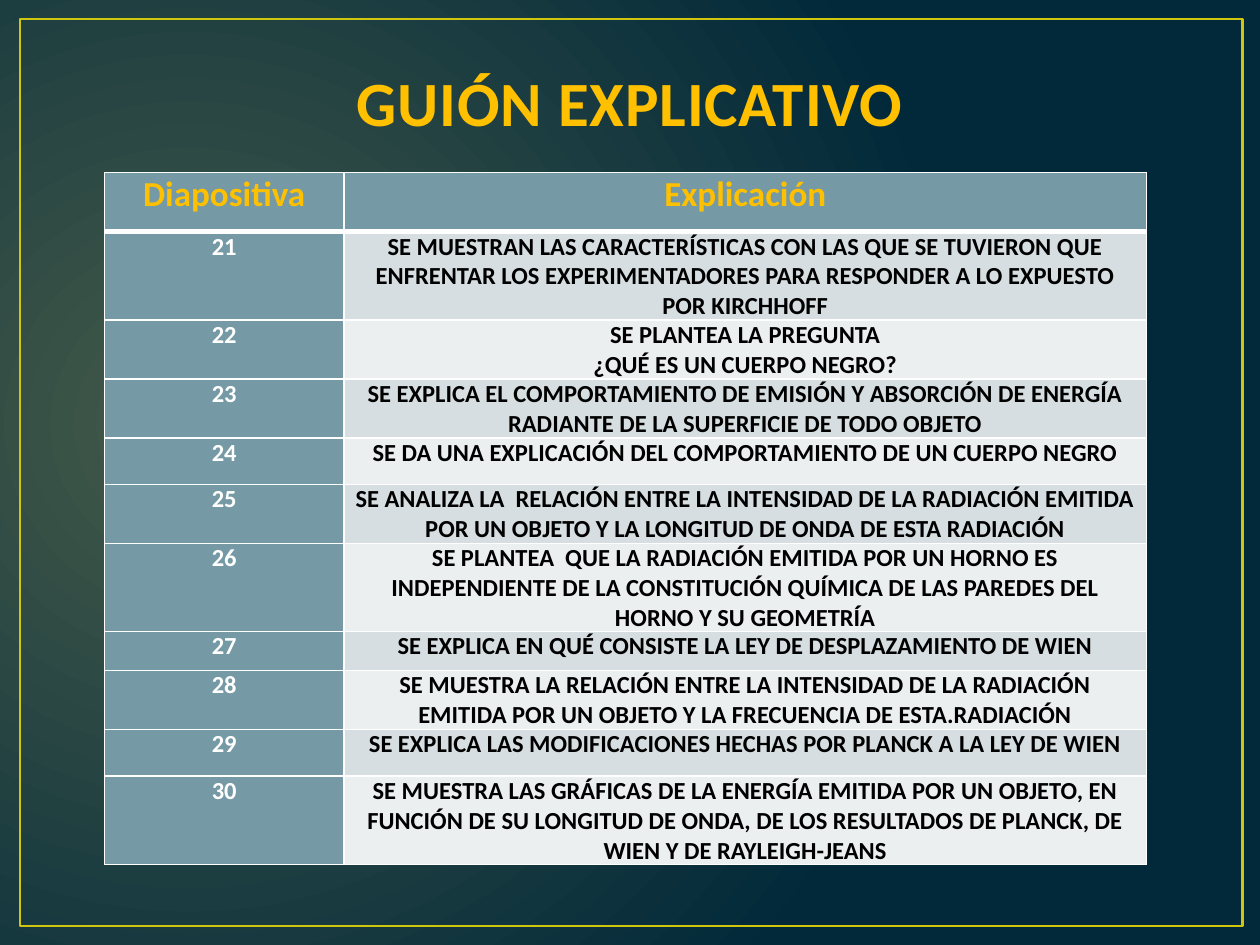
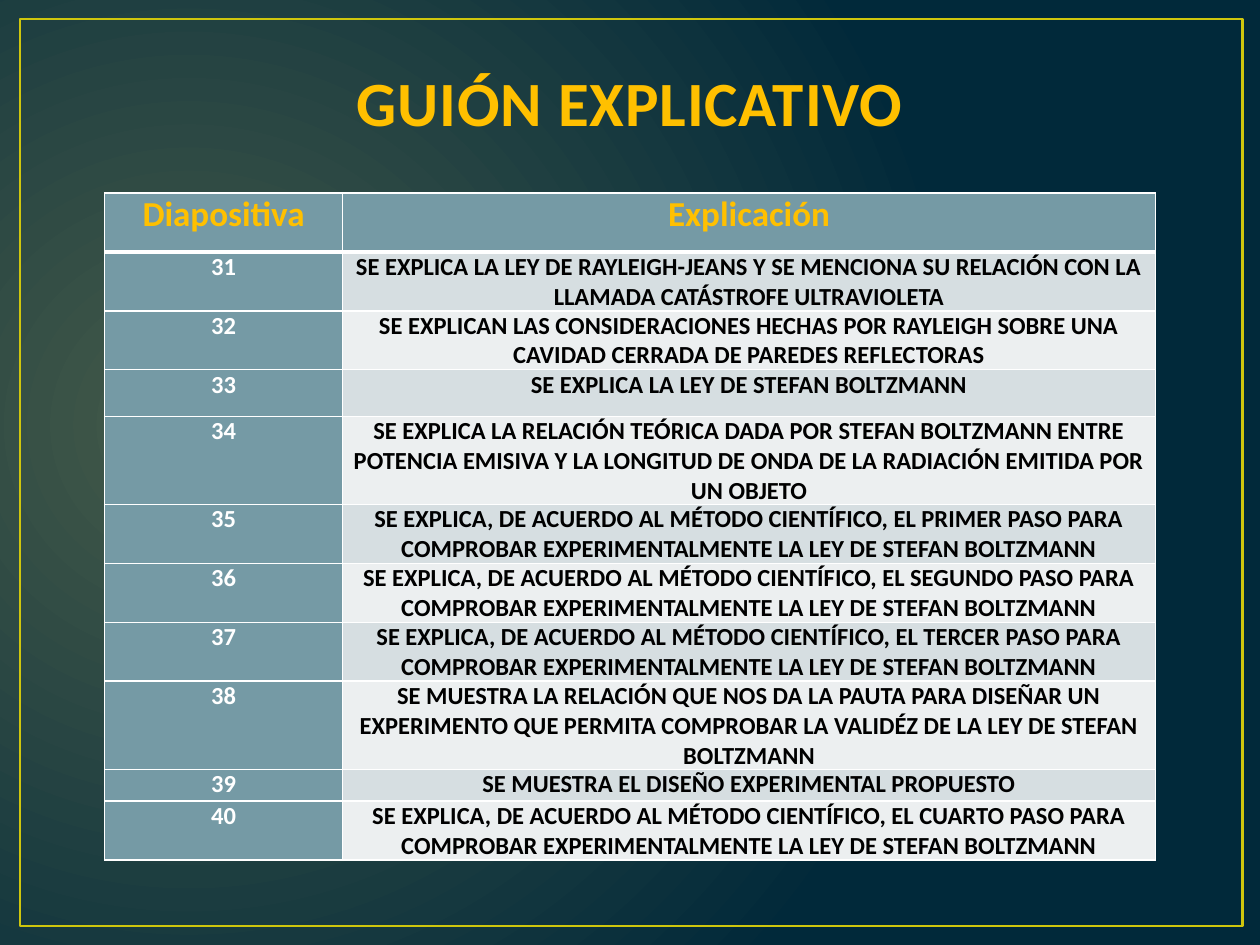
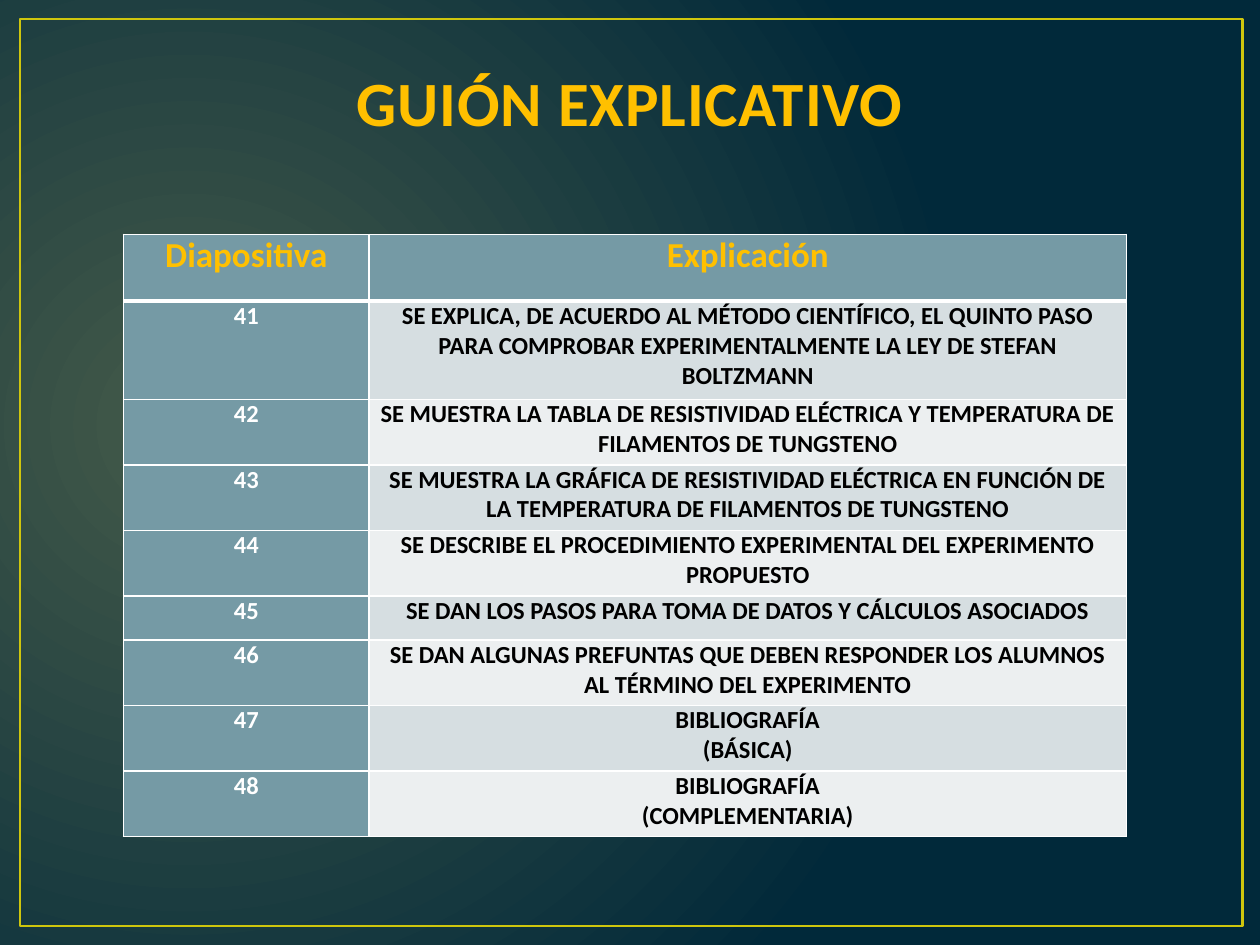
"""Builds three slides that explain, in tables, a numbered slide sequence."""
from lxml import etree
from pptx import Presentation
from pptx.dml.color import RGBColor
from pptx.enum.shapes import MSO_SHAPE
from pptx.enum.text import MSO_ANCHOR, PP_ALIGN
from pptx.oxml.ns import qn
from pptx.util import Inches, Pt

RECTANGLE = MSO_SHAPE.RECTANGLE
BOTTOM = MSO_ANCHOR.BOTTOM
CENTER = PP_ALIGN.CENTER

FONT = "Calibri"
GOLD = "FFC000"
FRAME_YELLOW = "CFC60D"
TITLE_OUTLINE = "384F55"
TEAL = "759AA5"
BANDS = ("D6DEE1", "ECEFF0")
WHITE = "FFFFFF"
BLACK = "000000"
BACKGROUND = ("445A49", "01293A")
GLOW_CENTER = {"l": "15000", "t": "50000", "r": "85000", "b": "60000"}

TITLE = "GUIÓN EXPLICATIVO"
HEADINGS = ("Diapositiva", "Explicación")
STEP = ("SE EXPLICA, DE ACUERDO AL MÉTODO CIENTÍFICO, EL {} PASO PARA COMPROBAR "
        "EXPERIMENTALMENTE LA LEY DE STEFAN BOLTZMANN")

TABLES = [
    {
        "box": (0.83, 1.37, 8.27, 5.59), "columns": (1.9, 6.37),
        "header_height": 0.47, "first_number": 21,
        "rows": [
            (0.37, "SE MUESTRAN LAS CARACTERÍSTICAS CON LAS QUE SE TUVIERON QUE ENFRENTAR LOS "
                   "EXPERIMENTADORES PARA RESPONDER A LO EXPUESTO POR KIRCHHOFF"),
            (0.37, "SE PLANTEA LA PREGUNTA\n¿QUÉ ES UN CUERPO NEGRO?"),
            (0.37, "SE EXPLICA EL COMPORTAMIENTO DE EMISIÓN Y ABSORCIÓN DE ENERGÍA RADIANTE "
                   "DE LA SUPERFICIE DE TODO OBJETO"),
            (0.37, "SE DA UNA EXPLICACIÓN DEL COMPORTAMIENTO DE UN CUERPO NEGRO"),
            (0.37, "SE ANALIZA LA  RELACIÓN ENTRE LA INTENSIDAD DE LA RADIACIÓN EMITIDA POR UN "
                   "OBJETO Y LA LONGITUD DE ONDA DE ESTA RADIACIÓN"),
            (0.29, "SE PLANTEA  QUE LA RADIACIÓN EMITIDA POR UN HORNO ES INDEPENDIENTE DE LA "
                   "CONSTITUCIÓN QUÍMICA DE LAS PAREDES DEL HORNO Y SU GEOMETRÍA"),
            (0.31, "SE EXPLICA EN QUÉ CONSISTE LA LEY DE DESPLAZAMIENTO DE WIEN"),
            (0.37, "SE MUESTRA LA RELACIÓN ENTRE LA INTENSIDAD DE LA RADIACIÓN EMITIDA POR UN "
                   "OBJETO Y LA FRECUENCIA DE ESTA.RADIACIÓN"),
            (0.37, "SE EXPLICA LAS MODIFICACIONES HECHAS POR PLANCK A LA LEY DE WIEN"),
            (0.37, "SE MUESTRA LAS GRÁFICAS DE LA ENERGÍA EMITIDA POR UN OBJETO, EN FUNCIÓN DE "
                   "SU LONGITUD DE ONDA, DE LOS RESULTADOS DE PLANCK, DE WIEN Y DE "
                   "RAYLEIGH-JEANS"),
        ],
    },
    {
        "box": (0.83, 1.53, 8.35, 5.29), "columns": (1.89, 6.45),
        "header_height": 0.47, "first_number": 31,
        "rows": [
            (0.31, "SE EXPLICA LA LEY DE RAYLEIGH-JEANS Y SE MENCIONA SU RELACIÓN CON LA "
                   "LLAMADA CATÁSTROFE ULTRAVIOLETA"),
            (0.37, "SE EXPLICAN LAS CONSIDERACIONES HECHAS POR RAYLEIGH SOBRE UNA CAVIDAD "
                   "CERRADA DE PAREDES REFLECTORAS"),
            (0.37, "SE EXPLICA LA LEY DE STEFAN BOLTZMANN"),
            (0.37, "SE EXPLICA LA RELACIÓN TEÓRICA DADA POR STEFAN BOLTZMANN ENTRE POTENCIA "
                   "EMISIVA Y LA LONGITUD DE ONDA DE LA RADIACIÓN EMITIDA POR UN OBJETO"),
            (0.25, STEP.format("PRIMER")),
            (0.37, STEP.format("SEGUNDO")),
            (0.37, STEP.format("TERCER")),
            (0.37, "SE MUESTRA LA RELACIÓN QUE NOS DA LA PAUTA PARA DISEÑAR UN EXPERIMENTO QUE "
                   "PERMITA COMPROBAR LA VALIDÉZ DE LA LEY DE STEFAN BOLTZMANN"),
            (0.25, "SE MUESTRA EL DISEÑO EXPERIMENTAL PROPUESTO"),
            (0.37, STEP.format("CUARTO")),
        ],
    },
    {
        "box": (0.98, 1.86, 7.95, 4.8), "columns": (1.95, 6.01),
        "header_height": 0.53, "first_number": 41,
        "rows": [
            (0.78, STEP.format("QUINTO")),
            (0.52, "SE MUESTRA LA TABLA DE RESISTIVIDAD ELÉCTRICA Y TEMPERATURA DE FILAMENTOS "
                   "DE TUNGSTENO"),
            (0.52, "SE MUESTRA LA GRÁFICA DE RESISTIVIDAD ELÉCTRICA EN FUNCIÓN DE LA "
                   "TEMPERATURA DE FILAMENTOS DE TUNGSTENO"),
            (0.52, "SE DESCRIBE EL PROCEDIMIENTO EXPERIMENTAL DEL EXPERIMENTO PROPUESTO"),
            (0.35, "SE DAN LOS PASOS PARA TOMA DE DATOS Y CÁLCULOS ASOCIADOS"),
            (0.52, "SE DAN ALGUNAS PREFUNTAS QUE DEBEN RESPONDER LOS ALUMNOS AL TÉRMINO DEL "
                   "EXPERIMENTO"),
            (0.52, "BIBLIOGRAFÍA\n(BÁSICA)"),
            (0.52, "BIBLIOGRAFÍA\n(COMPLEMENTARIA)"),
        ],
    },
]


def color(value):
    return RGBColor.from_string(value)


def inches(values):
    return [Inches(value) for value in values]


def add_line(parent, tag, value, points):
    line = etree.SubElement(parent, qn(tag), w=str(Pt(points)))
    fill = etree.SubElement(line, qn("a:solidFill"))
    etree.SubElement(fill, qn("a:srgbClr"), val=value)
    return line


def write(text_frame, text, size, value):
    text_frame.text = text
    for paragraph in text_frame.paragraphs:
        paragraph.alignment = CENTER
        for run in paragraph.runs:
            run.font.name = FONT
            run.font.size = Pt(size)
            run.font.bold = True
            run.font.color.rgb = color(value)


def set_background(master):
    fill = master.background.fill
    fill.gradient()
    for stop, value in zip(fill.gradient_stops, BACKGROUND):
        stop.color.rgb = color(value)
    gradient = master.element.find(".//" + qn("p:bgPr")).find(qn("a:gradFill"))
    gradient.remove(gradient.find(qn("a:lin")))
    glow = etree.SubElement(gradient, qn("a:path"), path="circle")
    etree.SubElement(glow, qn("a:fillToRect"), GLOW_CENTER)


def add_frame(slide):
    frame = slide.shapes.add_shape(RECTANGLE, *inches((0.16, 0.15, 9.7, 7.2)))
    frame.shadow.inherit = False
    frame.fill.background()
    frame.line.color.rgb = color(FRAME_YELLOW)
    frame.line.width = Pt(1.5)


def add_title(slide):
    text_frame = slide.shapes.add_textbox(*inches((0.5, 0.29, 9, 0.86))).text_frame
    text_frame.word_wrap = True
    text_frame.vertical_anchor = BOTTOM
    write(text_frame, TITLE, 36, GOLD)
    properties = text_frame.paragraphs[0].runs[0].font._element
    properties.set("spc", "50")
    properties.insert(0, add_line(properties, "a:ln", TITLE_OUTLINE, 1.05))


def fill_cell(cell, text, size, text_color, fill_color, bottom_width=1):
    cell.margin_left = cell.margin_right = Inches(0.07)
    cell.margin_top = cell.margin_bottom = 0
    write(cell.text_frame, text, size, text_color)
    properties = cell._tc.get_or_add_tcPr()
    for side, width in (("L", 1), ("R", 1), ("B", bottom_width)):
        add_line(properties, "a:ln" + side, WHITE, width)
    if bottom_width > 1:
        properties.insert(2, add_line(properties, "a:lnT", WHITE, 1))
    cell.fill.solid()
    cell.fill.fore_color.rgb = color(fill_color)


def add_explanations(slide, content):
    rows = content["rows"]
    table_shape = slide.shapes.add_table(len(rows) + 1, 2, *inches(content["box"]))
    table = table_shape.table
    for column, width in zip(table.columns, content["columns"]):
        column.width = Inches(width)
    table.rows[0].height = Inches(content["header_height"])
    for index, heading in enumerate(HEADINGS):
        fill_cell(table.cell(0, index), heading, 20, GOLD, TEAL, 3)
    for index, (height, explanation) in enumerate(rows):
        table.rows[index + 1].height = Inches(height)
        number = str(content["first_number"] + index)
        fill_cell(table.cell(index + 1, 0), number, 14, WHITE, TEAL)
        fill_cell(table.cell(index + 1, 1), explanation, 14, BLACK, BANDS[index % 2])
    table_shape.height = Inches(content["box"][3])


def main():
    presentation = Presentation()
    presentation.slide_width = Inches(10)
    presentation.slide_height = Inches(7.5)
    set_background(presentation.slide_master)
    for content in TABLES:
        slide = presentation.slides.add_slide(presentation.slide_layouts[6])
        add_frame(slide)
        add_title(slide)
        add_explanations(slide, content)
    presentation.save("out.pptx")


if __name__ == "__main__":
    main()
